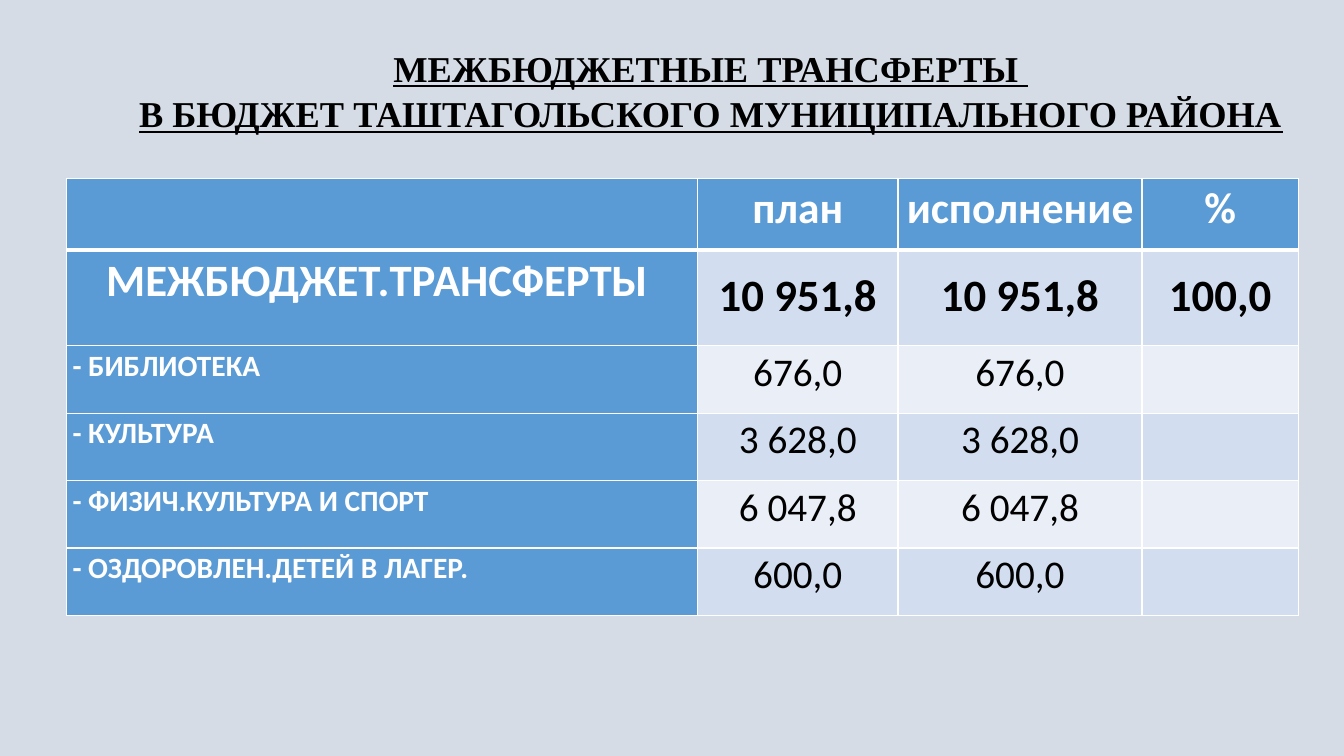
import pptx
import pptx.util
import pptx.dml.color
import pptx.enum.text
import pptx.oxml
import pptx.oxml.ns

Cm = pptx.util.Cm
Pt = pptx.util.Pt
RGBColor = pptx.dml.color.RGBColor
ALIGN = pptx.enum.text.PP_ALIGN
ANCHOR = pptx.enum.text.MSO_ANCHOR

BACKGROUND = RGBColor(0xD6, 0xDC, 0xE5)
BLUE = RGBColor(0x5B, 0x9B, 0xD5)
BAND_DARK = RGBColor(0xD2, 0xDE, 0xEF)
BAND_LIGHT = RGBColor(0xEA, 0xEF, 0xF7)
WHITE = RGBColor(0xFF, 0xFF, 0xFF)
BLACK = RGBColor(0, 0, 0)


def write(text_frame, text, size, font="Calibri", color=BLACK, bold=True,
          underline=False, align=ALIGN.CENTER, spacing=1.07):
    for index, line in enumerate(text.split("\n")):
        paragraph = text_frame.paragraphs[0] if index == 0 else text_frame.add_paragraph()
        paragraph.alignment = align
        paragraph.line_spacing = spacing
        paragraph.space_before = Pt(0)
        run = paragraph.add_run()
        run.text = line
        run.font.name = font
        run.font.size = Pt(size)
        run.font.bold = bold
        run.font.underline = underline
        run.font.color.rgb = color


def add_border(cell, side, width):
    cell._tc.get_or_add_tcPr().append(pptx.oxml.parse_xml(
        f'<a:ln{side} {pptx.oxml.ns.nsdecls("a")} w="{Pt(width)}">'
        f'<a:solidFill><a:srgbClr val="{WHITE}"/></a:solidFill></a:ln{side}>'))


presentation = pptx.Presentation()
presentation.slide_width = Cm(33.87)
presentation.slide_height = Cm(19.05)
slide = presentation.slides.add_slide(presentation.slide_layouts[5])
slide.background.fill.solid()
slide.background.fill.fore_color.rgb = BACKGROUND

title = slide.shapes.title
title.left, title.top, title.width, title.height = Cm(3.12), Cm(0.97), Cm(29.59), Cm(3.25)
title.text_frame.word_wrap = False
title.text_frame.auto_size = pptx.enum.text.MSO_AUTO_SIZE.NONE
title.text_frame.vertical_anchor = ANCHOR.TOP
write(title.text_frame,
      "МЕЖБЮДЖЕТНЫЕ ТРАНСФЕРТЫ \nВ БЮДЖЕТ ТАШТАГОЛЬСКОГО МУНИЦИПАЛЬНОГО РАЙОНА",
      26, font="Times New Roman", underline=True, spacing=1.05)

transfers = [
    ["", "план", "исполнение", "%"],
    ["МЕЖБЮДЖЕТ.ТРАНСФЕРТЫ ", "10 951,8", "10 951,8", "100,0"],
    ["- БИБЛИОТЕКА", "676,0", "676,0", ""],
    ["- КУЛЬТУРА", "3 628,0", "3 628,0", ""],
    ["- ФИЗИЧ.КУЛЬТУРА И СПОРТ", "6 047,8", "6 047,8", ""],
    ["- ОЗДОРОВЛЕН.ДЕТЕЙ В ЛАГЕР.", "600,0", "600,0", ""],
]
column_widths = [15.9, 5.05, 6.15, 3.94]
row_heights = [1.8, 2.41] + [1.7] * 4

table = slide.shapes.add_table(len(row_heights), len(column_widths), Cm(1.68), Cm(4.5),
                               Cm(sum(column_widths)), Cm(sum(row_heights))).table
for column, width in zip(table.columns, column_widths):
    column.width = Cm(width)
for row, height in zip(table.rows, row_heights):
    row.height = Cm(height)

for row_index, row in enumerate(transfers):
    for column_index, text in enumerate(row):
        cell = table.cell(row_index, column_index)
        is_label = row_index == 0 or column_index == 0
        is_total = row_index == 1
        cell.margin_left = cell.margin_right = Cm(0.15)
        cell.margin_top = Cm(0.37 if is_total and not is_label else 0)
        cell.margin_bottom = Cm(0)
        cell.vertical_anchor = ANCHOR.TOP

        add_border(cell, "L", 1)
        add_border(cell, "R", 1)
        add_border(cell, "T", 3 if is_total else 1)
        add_border(cell, "B", 3 if row_index == 0 else 1)
        cell.fill.solid()
        band = BAND_DARK if row_index % 2 else BAND_LIGHT
        cell.fill.fore_color.rgb = BLUE if is_label else band

        if text:
            if row_index < 2:
                size = 32 if is_total else 31
            else:
                size = 21 if is_label else 28
            write(cell.text_frame, text, size,
                  color=WHITE if is_label else BLACK,
                  bold=is_label or is_total,
                  align=ALIGN.LEFT if is_label and row_index > 1 else ALIGN.CENTER)

presentation.save("out.pptx")
